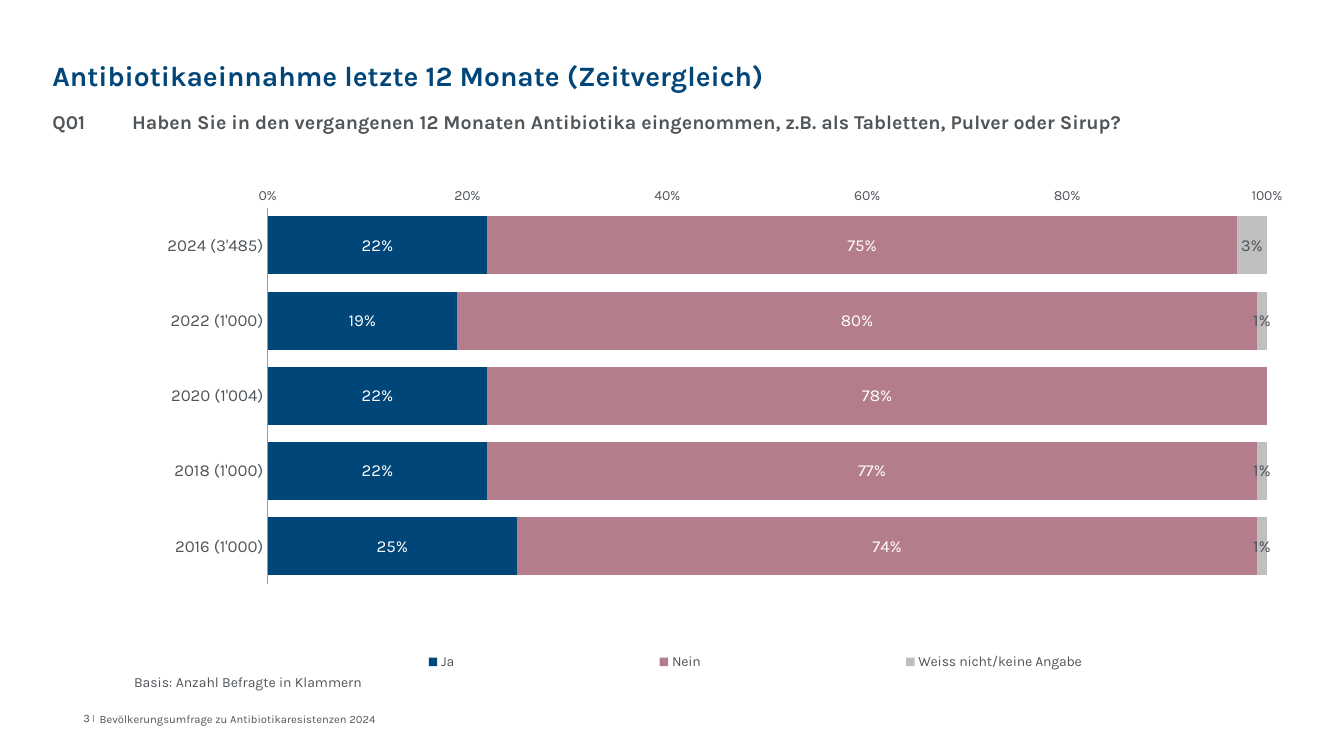
from lxml.etree import SubElement
from pptx import Presentation
from pptx.chart.data import CategoryChartData
from pptx.dml.color import RGBColor
from pptx.enum.chart import XL_AXIS_CROSSES as Crosses
from pptx.enum.chart import XL_CHART_TYPE as ChartType
from pptx.enum.chart import XL_TICK_MARK as TickMark
from pptx.enum.text import MSO_ANCHOR as Anchor
from pptx.enum.text import PP_ALIGN as Align
from pptx.oxml.ns import qn
from pptx.util import Cm, Pt

NAVY = RGBColor(0x00, 0x46, 0x78)
ROSE = RGBColor(0xB4, 0x7D, 0x8C)
SILVER = RGBColor(0xBF, 0xBF, 0xBF)
GREY = RGBColor(0x50, 0x55, 0x5A)
AXIS_GREY = RGBColor(0x93, 0x99, 0x9F)
WHITE = RGBColor(0xFF, 0xFF, 0xFF)
FONT = "Karla"
PERCENT = "0%"

TEXTS = [
    {"spans": ["Antibiotikaeinnahme letzte 12 Monate (Zeitvergleich)"],
     "frame": (1.32, 0.74, 21.01, 1.6), "anchor": Anchor.BOTTOM,
     "font": {"size": 20, "color": NAVY, "bold": True}, "spacing": 0.9},
    {"spans": ["Q01\tHaben Sie in den vergangenen 12 Monaten Antibiotika "
               "eingenommen, z.B. als Tabletten, Pulver oder Sirup?"],
     "frame": (1.32, 2.72, 30.81, 1.19), "hanging": 2.01,
     "font": {"size": 14, "bold": True}, "spacing": 1.1},
    {"spans": ["Basis: Anzahl Befragte in Klammern"],
     "frame": (3.38, 16.92, 18.95, 0.41),
     "font": {"size": 10}, "spacing": 1.1},
    {"spans": ["3 ", "|"], "raised": "|",
     "frame": (1.32, 17.88, 1.07, 0.41), "anchor": Anchor.BOTTOM,
     "font": {"size": 8}, "align": Align.RIGHT},
    {"spans": ["Bevölkerungsumfrage zu Antibiotikaresistenzen 2024"],
     "frame": (2.51, 17.88, 19.84, 0.41), "anchor": Anchor.BOTTOM,
     "font": {"size": 8}},
]

YEARS = ["2024 (3'485)", "2022 (1'000)", "2020 (1'004)",
         "2018 (1'000)", "2016 (1'000)"]
ANSWERS = [
    ("Ja", (0.22, 0.19, 0.22, 0.22, 0.25), NAVY, WHITE),
    ("Nein", (0.75, 0.8, 0.78, 0.77, 0.74), ROSE, WHITE),
    ("Weiss nicht/keine Angabe", (0.03, 0.01, None, 0.01, 0.01), SILVER, GREY),
]
CHART_FRAME = (3.33, 4.34, 30.2, 13.34)
PLOT_AREA = {"x": 0.113, "y": 0.067, "w": 0.834, "h": 0.711}
LEGEND_AREA = {"x": 0.08, "y": 0.89, "w": 0.88, "h": 0.07}


def set_all(target, values):
    for name, value in values.items():
        setattr(target, name, value)


def style_font(font, size, color=GREY, bold=False):
    set_all(font, {"name": FONT, "size": Pt(size), "bold": bold})
    font.color.rgb = color


def add_text(page, entry):
    box = page.shapes.add_textbox(*map(Cm, entry["frame"]))
    frame = box.text_frame
    set_all(frame, {"word_wrap": True, "margin_left": 0, "margin_right": 0,
                    "margin_top": 0, "margin_bottom": 0,
                    "vertical_anchor": entry.get("anchor", Anchor.TOP)})
    para = frame.paragraphs[0]
    set_all(para, {"alignment": entry.get("align", Align.LEFT),
                   "line_spacing": entry.get("spacing", 1.0)})
    if "hanging" in entry:
        indent = Cm(entry["hanging"])
        properties = para._p.get_or_add_pPr()
        properties.set("marL", str(indent))
        properties.set("indent", str(-indent))
    for text in entry["spans"]:
        span = para.add_run()
        span.text = text
        style_font(span.font, **entry["font"])
        if text == entry.get("raised"):
            span.font.size = Pt(10)
            span._r.get_or_add_rPr().set("baseline", "10000")


def place(element, area, index, inner=False):
    for old in element.findall(qn("c:layout")):
        element.remove(old)
    layout = SubElement(element, qn("c:layout"))
    element.insert(index, layout)
    manual = SubElement(layout, qn("c:manualLayout"))
    settings = [("layoutTarget", "inner")] if inner else []
    settings += [("xMode", "edge"), ("yMode", "edge"), *area.items()]
    for name, value in settings:
        SubElement(manual, qn(f"c:{name}")).set("val", str(value))


def add_chart(page):
    data = CategoryChartData(number_format=PERCENT)
    data.categories = YEARS
    for name, values, _, _ in ANSWERS:
        data.add_series(name, values)
    chart = page.shapes.add_chart(
        ChartType.BAR_STACKED_100, *map(Cm, CHART_FRAME), data).chart
    set_all(chart, {"has_title": False, "has_legend": True})
    style_font(chart.font, 10)

    plot = chart.plots[0]
    set_all(plot, {"gap_width": 30, "overlap": 100, "vary_by_categories": False})
    for series, (_, _, fill, label_color) in zip(plot.series, ANSWERS):
        series.format.fill.solid()
        series.format.fill.fore_color.rgb = fill
        labels = series.data_labels
        set_all(labels, {"show_value": True, "number_format": PERCENT,
                         "number_format_is_linked": False})
        style_font(labels.font, 12, label_color)

    years, shares = chart.category_axis, chart.value_axis
    for axis, size in ((years, 12), (shares, 10)):
        set_all(axis, {"has_major_gridlines": False,
                       "major_tick_mark": TickMark.NONE,
                       "minor_tick_mark": TickMark.NONE})
        style_font(axis.tick_labels.font, size)
    set_all(years, {"reverse_order": True, "crosses": Crosses.MAXIMUM})
    years.format.line.color.rgb = AXIS_GREY
    years.format.line.width = Pt(0.75)
    set_all(shares, {"minimum_scale": 0, "maximum_scale": 1, "major_unit": 0.2})
    set_all(shares.tick_labels, {"number_format": PERCENT,
                                 "number_format_is_linked": False})
    shares.format.line.fill.background()

    chart.legend.include_in_layout = False
    style_font(chart.legend.font, 10)
    place(chart._chartSpace.chart.plotArea, PLOT_AREA, 0, inner=True)
    place(chart.legend._element, LEGEND_AREA, 1)


def main():
    deck = Presentation()
    set_all(deck, {"slide_width": Cm(33.87), "slide_height": Cm(19.05)})
    page = deck.slides.add_slide(deck.slide_layouts[6])
    add_chart(page)
    for entry in TEXTS:
        add_text(page, entry)
    deck.save("out.pptx")


if __name__ == "__main__":
    main()
